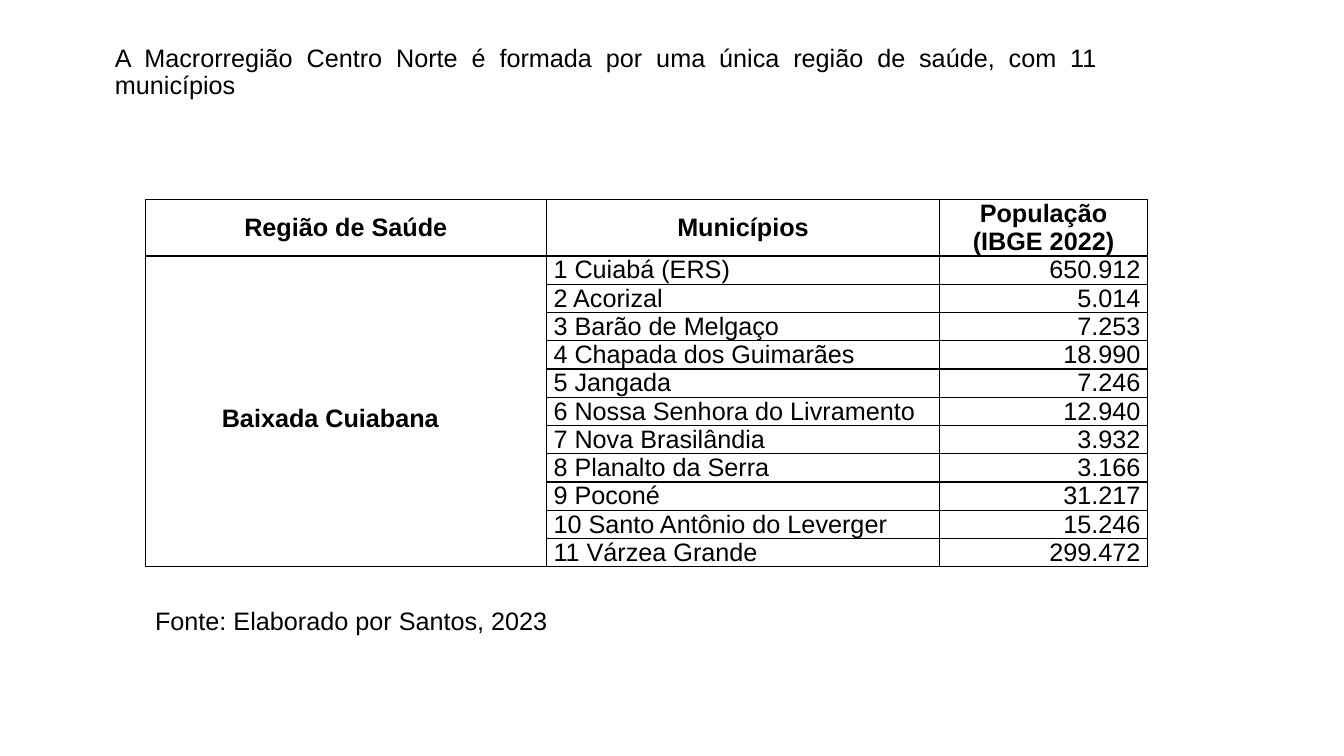
from lxml import etree
from pptx import Presentation, util as u
from pptx.dml.color import RGBColor
from pptx.enum import text
from pptx.oxml import ns

COLORS = {"ink": "000000"}
MUNICIPALITIES = [
    ("Cuiabá (ERS)", "650.912"),
    ("Acorizal", "5.014"),
    ("Barão de Melgaço", "7.253"),
    ("Chapada dos Guimarães", "18.990"),
    ("Jangada", "7.246"),
    ("Nossa Senhora do Livramento", "12.940"),
    ("Nova Brasilândia", "3.932"),
    ("Planalto da Serra", "3.166"),
    ("Poconé", "31.217"),
    ("Santo Antônio do Leverger", "15.246"),
    ("Várzea Grande", "299.472"),
]
ALIGN = text.PP_ALIGN
MIDDLE = text.MSO_ANCHOR.MIDDLE


class RegionSlide:
    font = "Arial"
    size = u.Pt(18)
    border = u.Pt(1)

    def __init__(self, deck):
        self.slide = deck.slides.add_slide(deck.slide_layouts[1])
        title = self.slide.shapes.title
        title.element.getparent().remove(title.element)

    def add_words(self, frame, words, align=ALIGN.LEFT, bold=False):
        paragraph = frame.paragraphs[0]
        paragraph.alignment = align
        run = paragraph.add_run()
        run.text = words
        run.font.name, run.font.size, run.font.bold = self.font, self.size, bold
        run.font.color.rgb = RGBColor.from_string(COLORS["ink"])
        return paragraph

    def body(self, words, left, top, width, height):
        intro = self.slide.placeholders[1]
        intro.left, intro.top, intro.width, intro.height = map(
            u.Inches, (left, top, width, height))
        intro.text_frame.auto_size = text.MSO_AUTO_SIZE.NONE
        intro.text_frame.vertical_anchor = text.MSO_ANCHOR.TOP
        paragraph = self.add_words(intro.text_frame, words, ALIGN.JUSTIFY)
        paragraph.line_spacing = 0.9
        paragraph.space_before = u.Pt(10)
        properties = paragraph._p.get_or_add_pPr()
        properties.set("marL", "0")
        properties.set("indent", "0")
        etree.SubElement(properties, ns.qn("a:buNone"))

    def note(self, words, left, top, width, height):
        source = self.slide.shapes.add_textbox(
            *map(u.Inches, (left, top, width, height)))
        source.text_frame.word_wrap = True
        source.text_frame.auto_size = text.MSO_AUTO_SIZE.SHAPE_TO_FIT_TEXT
        self.add_words(source.text_frame, words)

    def table(self, left, top, widths, heights):
        """Add an unfilled, ruled grid of the given column widths and row heights."""
        grid = self.slide.shapes.add_table(
            len(heights), len(widths),
            *map(u.Inches, (left, top, sum(widths), sum(heights)))).table
        grid.first_row = grid.horz_banding = False
        for column, width in zip(grid.columns, widths):
            column.width = u.Inches(width)
        for row, height in zip(grid.rows, heights):
            row.height = u.Inches(height)
        for cell in grid.iter_cells():
            cell.fill.background()
            cell.margin_left = cell.margin_right = u.Inches(0.07)
            cell.margin_top = cell.margin_bottom = 0
            self.rule(cell)
        return grid

    def rule(self, cell):
        """Draw a solid line on all four sides of the cell."""
        properties = cell._tc.get_or_add_tcPr()
        for place, side in enumerate(("lnL", "lnR", "lnT", "lnB")):
            line = etree.Element(ns.qn(f"a:{side}"), w=str(int(self.border)))
            fill = etree.SubElement(line, ns.qn("a:solidFill"))
            etree.SubElement(fill, ns.qn("a:srgbClr"), val=COLORS["ink"])
            properties.insert(place, line)


def main():
    deck = Presentation()
    deck.slide_width, deck.slide_height = u.Inches(13.33), u.Inches(7.5)
    page = RegionSlide(deck)
    page.body("A Macrorregião Centro Norte é formada por uma única região de saúde, "
              "com 11 municípios", 1.04, 0.4, 9.94, 6.88)

    population = page.table(1.44, 1.98, [3.98, 3.9, 2.06],
                            [0.55] + [0.28] * len(MUNICIPALITIES))
    headings = ("Região de Saúde", "Municípios", "População (IBGE 2022)")
    for column, heading in enumerate(headings):
        header = population.cell(0, column)
        header.vertical_anchor = MIDDLE
        page.add_words(header.text_frame, heading, ALIGN.CENTER, bold=True)

    region = population.cell(1, 0)
    region.merge(population.cell(len(MUNICIPALITIES), 0))
    region.vertical_anchor = MIDDLE
    region.margin_left = u.Inches(0.76)
    page.add_words(region.text_frame, "Baixada Cuiabana", ALIGN.JUSTIFY,
                   bold=True).line_spacing = 1.5

    for number, (municipality, residents) in enumerate(MUNICIPALITIES, 1):
        page.add_words(population.cell(number, 1).text_frame,
                       f"{number} {municipality}", ALIGN.JUSTIFY)
        page.add_words(population.cell(number, 2).text_frame, residents, ALIGN.RIGHT)

    page.note("Fonte: Elaborado por Santos, 2023", 1.44, 5.96, 6.66, 0.4)
    deck.save("out.pptx")


if __name__ == "__main__":
    main()
